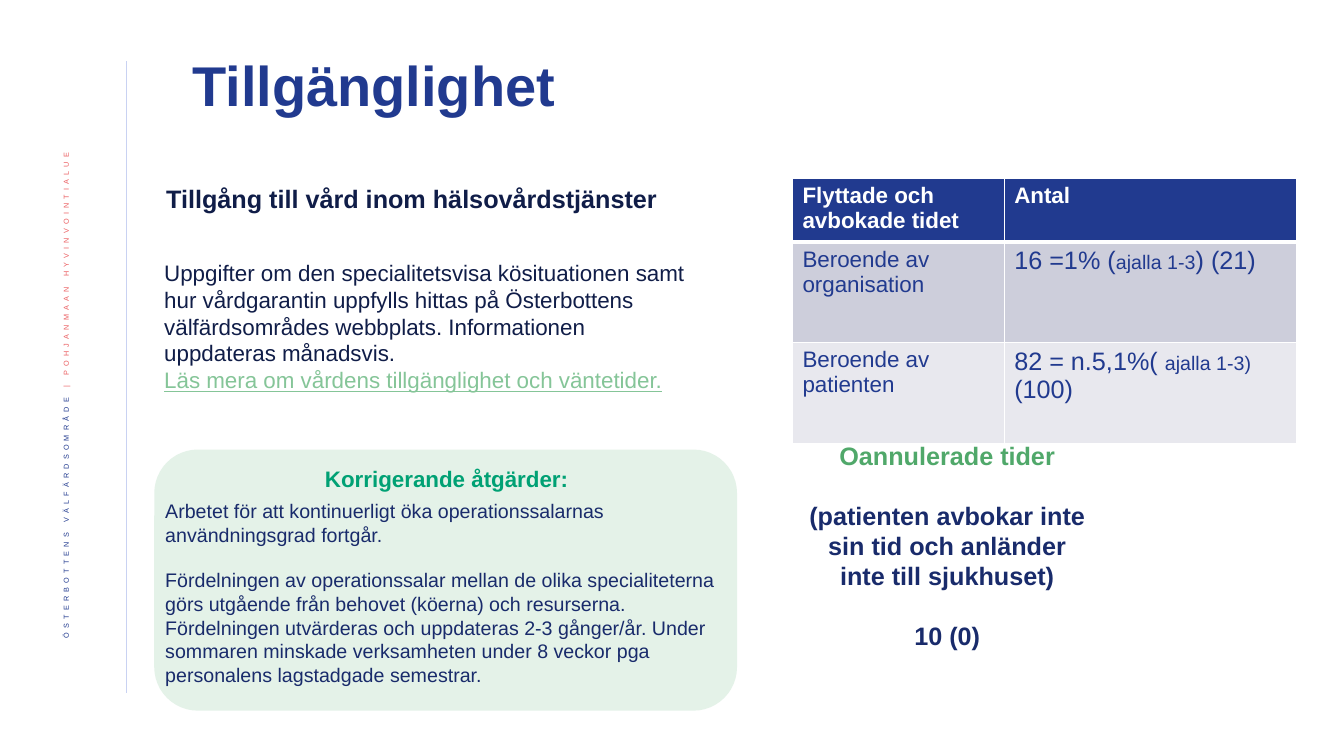
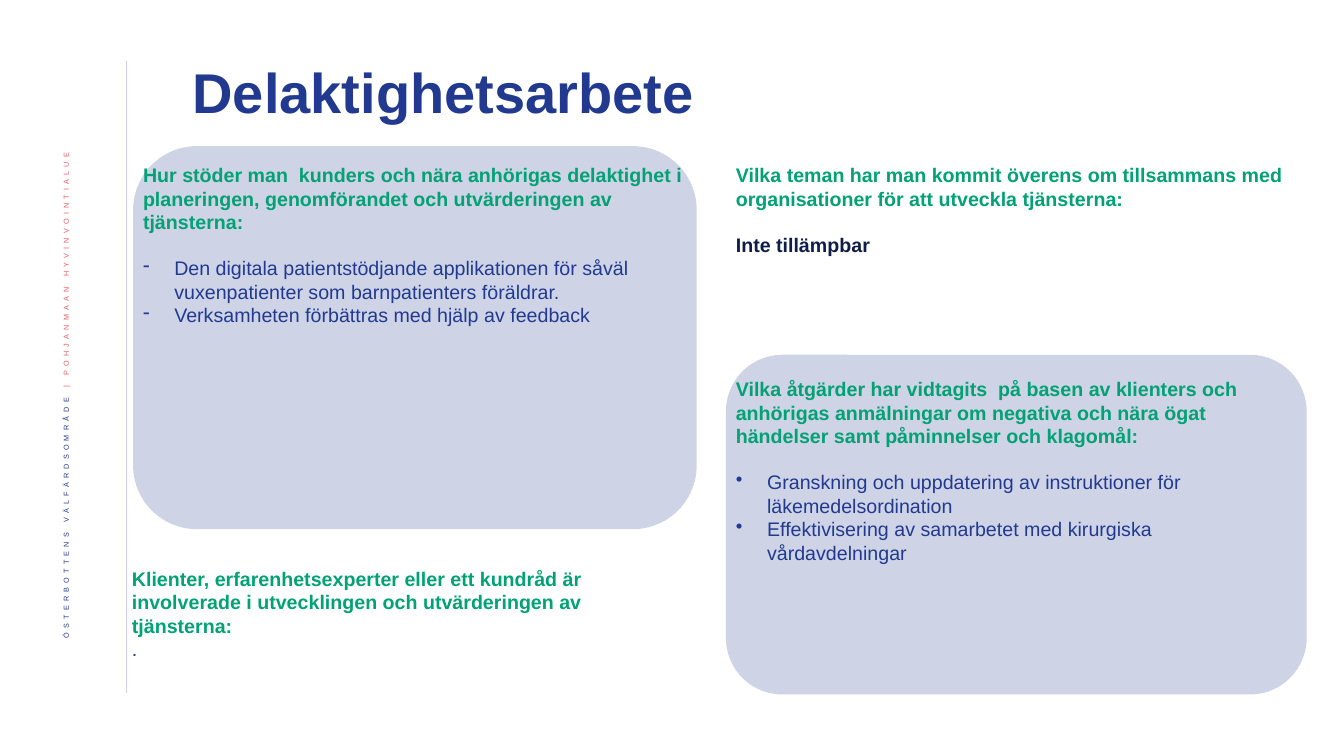
from lxml import etree
from pptx import Presentation
from pptx.dml.color import RGBColor
from pptx.enum.shapes import MSO_CONNECTOR, MSO_SHAPE
from pptx.enum.text import MSO_ANCHOR, PP_ALIGN
from pptx.oxml import parse_xml
from pptx.oxml.ns import nsdecls, qn
from pptx.util import Inches, Pt

LEFT, CENTER, RIGHT = PP_ALIGN.LEFT, PP_ALIGN.CENTER, PP_ALIGN.RIGHT
MIDDLE = MSO_ANCHOR.MIDDLE
ROUNDED = MSO_SHAPE.ROUNDED_RECTANGLE
STRAIGHT = MSO_CONNECTOR.STRAIGHT

FONT = "Arial"
COLOURS = {
    "blue": "213A8F", "navy": "192B6B", "ink": "101D48", "rule": "C9D2F2",
    "green": "00A174", "mid green": "50A86A", "light green": "85C598",
    "coral": "EB5C5F", "white": "FFFFFF", "band dark": "CDCEDB", "band light": "E8E8EE",
}
# style: size, colour, bold, underline
STYLES = {
    "strip blue": (9, "blue", False, False),
    "strip coral": (9, "coral", False, False),
    "subtitle": (18, "ink", True, False),
    "intro": (16, "ink", False, False),
    "link": (16, "light green", False, True),
    "panel title": (16, "green", True, False),
    "measure": (14, "navy", False, False),
    "cancelled title": (18, "mid green", True, False),
    "cancelled": (18, "navy", True, False),
    "question": (14, "green", True, False),
    "answer": (14, "blue", False, False),
    "answer bold": (14, "ink", True, False),
    "table head": (16, "white", True, False),
    "table label": (16, "blue", False, False),
    "table value": (18, "blue", False, False),
    "table note": (14, "blue", False, False),
}
BLANK_14, BLANK_18 = 16, 21  # points, one line of text

SIDE_STRIP = [("ÖSTERBOTTENS VÄLFÄRDSOMRÅDE ", "strip blue"),
              ("| POHJANMAAN HYVINVOINTIALUE", "strip coral")]

# panel: left, top, width, height, colour
# text: box, alignment, paragraphs; paragraph: runs, space after, bullet
SLIDES = [
    {
        "title": ("Tillgänglighet", (1.81, 0.45, 10.98, 0.85)),
        "panels": [(1.53, 4.46, 5.78, 2.59, "light green")],
        "texts": [
            ((1.55, 1.77, 5.77, 0.4), LEFT, [
                ([("Tillgång till vård inom hälsovårdstjänster", "subtitle")], 0, None)]),
            ((1.53, 2.52, 5.51, 1.45), LEFT, [
                ([("Uppgifter om den specialitetsvisa kösituationen samt hur vårdgarantin "
                   "uppfylls hittas på Österbottens välfärdsområdes webbplats. "
                   "Informationen uppdateras månadsvis.", "intro")], 0, None),
                ([("Läs mera om vårdens tillgänglighet och väntetider.", "link")], 0, None)]),
            ((1.54, 4.57, 5.78, 0.4), CENTER, [
                ([("Korrigerande åtgärder:", "panel title")], 0, None)]),
            ((1.54, 4.9, 5.78, 2.01), LEFT, [
                ([("Arbetet för att kontinuerligt öka operationssalarnas "
                   "användningsgrad fortgår.", "measure")], BLANK_14, None),
                ([("Fördelningen av operationssalar mellan de olika specialiteterna görs "
                   "utgående från behovet (köerna) och resurserna. Fördelningen utvärderas "
                   "och uppdateras 2-3 gånger/år. Under sommaren minskade verksamheten "
                   "under 8 veckor pga personalens lagstadgade semestrar.",
                   "measure")], 0, None)]),
            ((7.86, 4.32, 3.07, 2.22), CENTER, [
                ([("Oannulerade tider", "cancelled title")], BLANK_18, None),
                ([("(patienten avbokar inte sin tid och anländer inte till sjukhuset)",
                   "cancelled")], BLANK_18, None),
                ([("10 (0)", "cancelled")], 0, None)]),
        ],
        "table": {
            "at": (7.86, 1.77), "columns": (2.1, 2.9), "heights": (0.63, 1, 1),
            "fills": ("blue", "band dark", "band light"),
            "rows": [
                ([("Flyttade och avbokade tidet", "table head")], [("Antal", "table head")]),
                ([("Beroende av organisation", "table label")],
                 [("16 =1% (", "table value"), ("ajalla 1-3", "table note"),
                  (") (21)", "table value")]),
                ([("Beroende av patienten", "table label")],
                 [("82 = n.5,1%( ", "table value"), ("ajalla 1-3)", "table note"),
                  ("(100)", "table value")]),
            ],
        },
    },
    {
        "title": ("Delaktighetsarbete", (1.81, 0.45, 9.98, 0.99)),
        "panels": [(1.32, 1.45, 5.59, 3.8, "blue"), (7.2, 3.52, 5.76, 3.37, "blue")],
        "texts": [
            ((1.32, 1.57, 5.59, 2.22), LEFT, [
                ([("Hur stöder man  kunders och nära anhörigas delaktighet i planeringen, "
                   "genomförandet och utvärderingen av tjänsterna:", "question")],
                 BLANK_14, None),
                ([("Den digitala patientstödjande applikationen för såväl vuxenpatienter "
                   "som barnpatienters föräldrar.", "answer")], 0, "-"),
                ([("Verksamheten förbättras med hjälp av feedback", "answer")], 0, "-")]),
            ((7.2, 1.57, 5.76, 1.31), LEFT, [
                ([("Vilka teman har man kommit överens om tillsammans med organisationer "
                   "för att utveckla tjänsterna:", "question")], BLANK_14, None),
                ([("Inte tillämpbar", "answer bold")], 0, None)]),
            ((1.21, 5.57, 5.59, 1.28), LEFT, [
                ([("Klienter, erfarenhetsexperter eller ett kundråd är involverade i "
                   "utvecklingen och utvärderingen av tjänsterna:", "question")], 0, None),
                ([(".", "answer")], 0, None)]),
            ((7.2, 3.69, 5.76, 2.22), LEFT, [
                ([("Vilka åtgärder har vidtagits  på basen av klienters och anhörigas "
                   "anmälningar om negativa och nära ögat händelser samt påminnelser och "
                   "klagomål:", "question")], BLANK_14, None),
                ([("Granskning och uppdatering av instruktioner för läkemedelsordination",
                   "answer")], 0, "•"),
                ([("Effektivisering av samarbetet med kirurgiska vårdavdelningar",
                   "answer")], 0, "•")]),
        ],
    },
]


def rgb(name):
    return RGBColor.from_string(COLOURS[name])


def inches(values):
    return [Inches(value) for value in values]


def add_runs(paragraph, runs):
    for text, style in runs:
        size, colour, bold, underline = STYLES[style]
        run = paragraph.add_run()
        run.text = text
        font = run.font
        font.name, font.size, font.bold = FONT, Pt(size), bold
        font.color.rgb = rgb(colour)
        if underline:
            font.underline = True


def add_bullet(paragraph, character):
    properties = paragraph._p.get_or_add_pPr()
    properties.set("marL", str(Inches(0.31)))
    properties.set("indent", str(-Inches(0.31)))
    etree.SubElement(properties, qn("a:buChar")).set("char", character)


def add_text(slide, box, alignment, paragraphs):
    shape = slide.shapes.add_textbox(*inches(box))
    frame = shape.text_frame
    frame.word_wrap = True
    for index, (runs, space_after, bullet) in enumerate(paragraphs):
        paragraph = frame.add_paragraph() if index else frame.paragraphs[0]
        if bullet:
            add_bullet(paragraph, bullet)
        paragraph.alignment = alignment
        paragraph.space_after = Pt(space_after)
        add_runs(paragraph, runs)
    return shape


def add_panel(slide, left, top, width, height, colour):
    shape = slide.shapes.add_shape(ROUNDED, *inches((left, top, width, height)))
    shape.shadow.inherit = False
    shape.fill.solid()
    shape.fill.fore_color.rgb = rgb(colour)
    shape.line.fill.background()
    fill_colour = shape._element.spPr.find(".//" + qn("a:srgbClr"))
    etree.SubElement(fill_colour, qn("a:alpha")).set("val", "22000")


def add_borders(cell, widths):
    properties = cell._tc.get_or_add_tcPr()
    for side, width in widths.items():
        properties.append(parse_xml(
            f'<a:ln{side} {nsdecls("a")} w="{Pt(width)}"><a:solidFill>'
            f'<a:srgbClr val="{COLOURS["white"]}"/></a:solidFill></a:ln{side}>'))


def add_table(slide, at, columns, heights, fills, rows):
    size = (sum(columns), sum(heights))
    table = slide.shapes.add_table(len(rows), len(columns), *inches(at + size)).table
    table.horz_banding = False
    for column, width in zip(table.columns, columns):
        column.width = Inches(width)
    for index, (row, height) in enumerate(zip(table.rows, heights)):
        row.height = Inches(height)
        for cell, runs in zip(row.cells, rows[index]):
            add_borders(cell, {"L": 1, "R": 1, "T": 3 if index == 1 else 1,
                               "B": 3 if index == 0 else 1})
            cell.fill.solid()
            cell.fill.fore_color.rgb = rgb(fills[index])
            add_runs(cell.text_frame.paragraphs[0], runs)


def style_title(layout):
    """Keep only the title on the layout and give it the shared look."""
    for placeholder in list(layout.placeholders):
        if placeholder.placeholder_format.idx:
            placeholder._element.getparent().remove(placeholder._element)
    title = layout.placeholders[0]
    title.text_frame.vertical_anchor = MIDDLE
    title._element.txBody.find(qn("a:lstStyle")).append(parse_xml(
        f'<a:lvl1pPr {nsdecls("a")} algn="l"><a:lnSpc><a:spcPct val="90000"/></a:lnSpc>'
        f'<a:defRPr sz="4000" b="1"><a:solidFill><a:srgbClr val="{COLOURS["blue"]}"/>'
        f'</a:solidFill><a:latin typeface="{FONT}"/></a:defRPr></a:lvl1pPr>'))


def add_side_strip(slide, layout):
    """Draw the rule and the vertical name, then move them to the layout."""
    rule = slide.shapes.add_connector(STRAIGHT, *inches((1.25, 0.61, 1.25, 6.88)))
    rule.line.color.rgb = rgb("rule")
    rule.line.width = Pt(0.5)
    etree.SubElement(rule._element.spPr, qn("a:effectLst"))

    strip = add_text(slide, (0.42, 1.42, 0.52, 5.73), RIGHT, [(SIDE_STRIP, 0, None)])
    strip.text_frame.vertical_anchor = MIDDLE
    strip.text_frame._txBody.bodyPr.set("vert", "vert270")
    paragraph = strip.text_frame.paragraphs[0]
    paragraph.line_spacing = 0.9
    for run in paragraph.runs:
        properties = run._r.get_or_add_rPr()
        properties.set("baseline", "30000")
        properties.set("spc", "300")
    for shape in (rule, strip):
        layout.shapes._spTree.append(shape._element)


def main():
    presentation = Presentation()
    presentation.slide_width, presentation.slide_height = inches((13.33, 7.5))
    layout = presentation.slide_layouts.get_by_name("Title Only")
    style_title(layout)
    for index, content in enumerate(SLIDES):
        slide = presentation.slides.add_slide(layout)
        if index == 0:
            add_side_strip(slide, layout)
        text, box = content["title"]
        title = slide.shapes.title
        title.left, title.top, title.width, title.height = inches(box)
        title.text_frame.text = text
        for panel in content["panels"]:
            add_panel(slide, *panel)
        if "table" in content:
            add_table(slide, **content["table"])
        for box, alignment, paragraphs in content["texts"]:
            add_text(slide, box, alignment, paragraphs)
    presentation.save("out.pptx")


if __name__ == "__main__":
    main()
